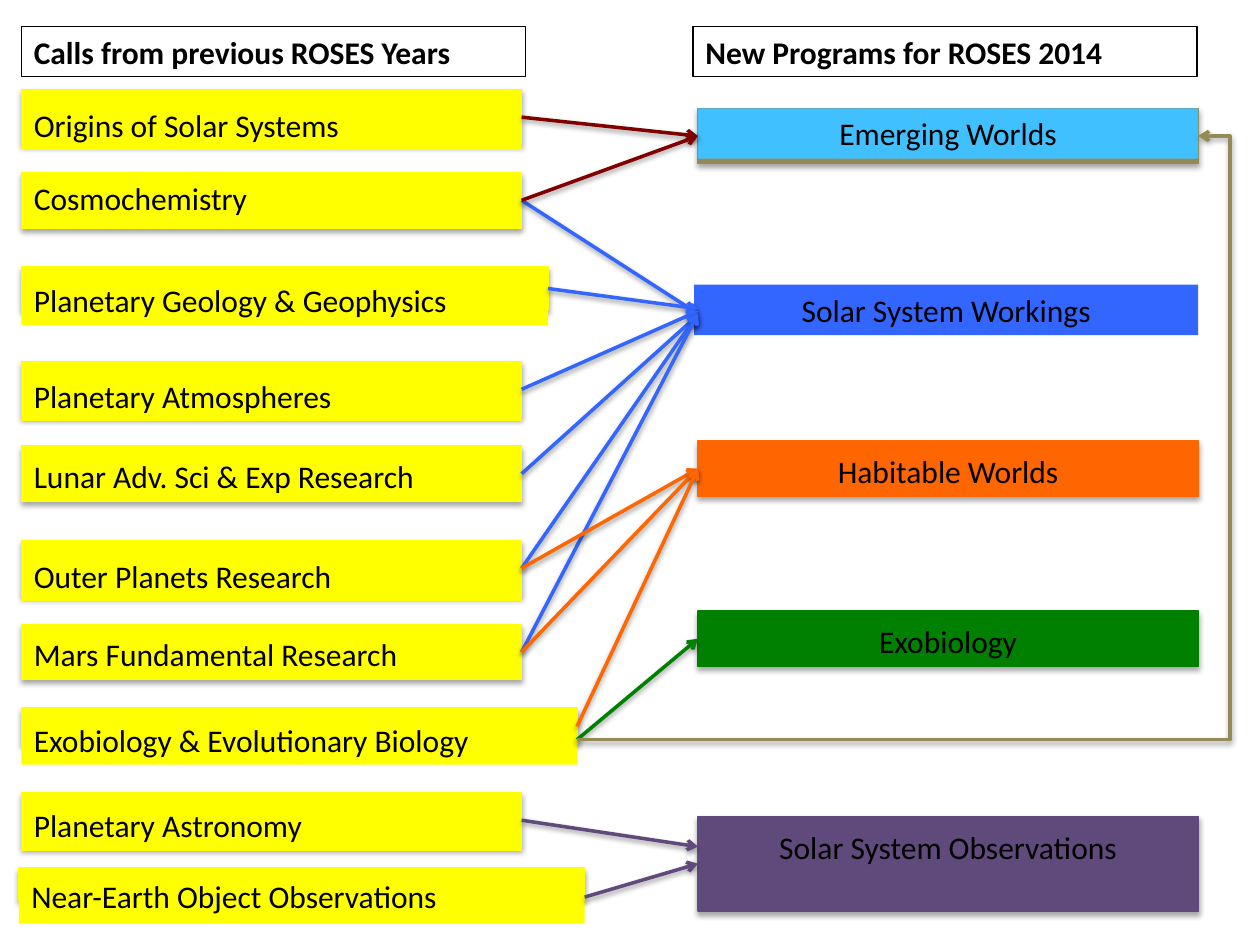
"""Build the slide that maps earlier ROSES calls to the new 2014 programs."""
import lxml.etree
import pptx
import pptx.dml.color
import pptx.enum.shapes
import pptx.enum.text
import pptx.oxml.ns
import pptx.util

Inches = pptx.util.Inches
COLORS = {
    "black": "000000", "yellow": "FFFF00", "tan": "948A54", "sky": "40C0FF",
    "blue": "3366FF", "orange": "FF6600", "green": "008000",
    "purple": "604A7B", "maroon": "800000",
}
LEFT, RIGHT = 1, 3
CALL_LEFT, PROGRAM_LEFT, BOX_WIDTH = 0.17, 5.54, 3.97

# text, left, width, (back top, height), (label top, height), outlined
CALLS = [
    ("Origins of Solar Systems", CALL_LEFT, BOX_WIDTH, (0.71, 0.44), (0.79, 0.4), False),
    ("Cosmochemistry", CALL_LEFT, BOX_WIDTH, (1.37, 0.44), (1.37, 0.4), False),
    ("Planetary Geology & Geophysics", CALL_LEFT, 4.18, (2.12, 0.34), (2.18, 0.4), False),
    ("Planetary Atmospheres", CALL_LEFT, BOX_WIDTH, (2.87, 0.44), (2.94, 0.4), False),
    ("Lunar Adv. Sci & Exp Research", CALL_LEFT, BOX_WIDTH, (3.54, 0.44), (3.58, 0.4), False),
    ("Outer Planets Research", CALL_LEFT, BOX_WIDTH, (4.29, 0.44), (4.37, 0.4), False),
    ("Mars Fundamental Research", CALL_LEFT, BOX_WIDTH, (4.96, 0.43), (4.99, 0.4), False),
    ("Exobiology & Evolutionary Biology", CALL_LEFT, 4.41, (5.62, 0.29), (5.67, 0.4), False),
    ("Planetary Astronomy", CALL_LEFT, BOX_WIDTH, (6.29, 0.44), (6.35, 0.4), True),
    ("Near-Earth Object Observations", 0.15, 4.49, (6.89, 0.26), (6.91, 0.42), False),
]
# text, label color, back color, (back top, height), label top, outlined
PROGRAMS = [
    ("Emerging Worlds", "sky", "tan", (0.86, 0.44), 0.86, False),
    ("Habitable Worlds", "orange", "orange", (3.5, 0.44), 3.54, False),
    ("Exobiology", "green", "green", (4.85, 0.44), 4.89, False),
    ("Solar System Observations", "purple", "purple", (6.48, 0.75), 6.52, True),
]
# call, call part, program, program part, color
LINKS = [
    ("Origins of Solar Systems", "back", "Emerging Worlds", "back", "maroon"),
    ("Cosmochemistry", "back", "Emerging Worlds", "back", "maroon"),
    ("Outer Planets Research", "back", "Habitable Worlds", "back", "orange"),
    ("Mars Fundamental Research", "back", "Habitable Worlds", "back", "orange"),
    ("Exobiology & Evolutionary Biology", "label", "Exobiology", "back", "green"),
    ("Exobiology & Evolutionary Biology", "back", "Habitable Worlds", "back", "orange"),
    ("Planetary Astronomy", "back", "Solar System Observations", "label", "purple"),
    ("Near-Earth Object Observations", "label", "Solar System Observations", "back", "purple"),
]
WORKINGS_ENDS = [
    ("Cosmochemistry", 2.49), ("Planetary Geology & Geophysics", 2.45),
    ("Planetary Atmospheres", 2.47), ("Lunar Adv. Sci & Exp Research", 2.5),
    ("Outer Planets Research", 2.49), ("Mars Fundamental Research", 2.49),
]


def rgb(name):
    """Return the named color."""
    return pptx.dml.color.RGBColor.from_string(COLORS[name])


def add_node(parent, tag, **attributes):
    """Append a drawing element and return it."""
    return lxml.etree.SubElement(parent, pptx.oxml.ns.qn(tag), **attributes)


def write_text(shape, text, size=18, bold=False, centered=False, color="black", font="Calibri"):
    """Write one formatted paragraph into a shape."""
    shape.text_frame.word_wrap = True
    paragraph = shape.text_frame.paragraphs[0]
    alignment = pptx.enum.text.PP_ALIGN
    paragraph.alignment = alignment.CENTER if centered else alignment.LEFT
    run = paragraph.add_run()
    run.text = text
    run.font.name, run.font.size, run.font.bold = font, pptx.util.Pt(size), bold
    run.font.color.rgb = rgb(color)


class SlideBuilder:
    """Hold the style and the current slide."""

    line_width = pptx.util.Pt(2)
    border_width = pptx.util.Pt(0.75)

    def __init__(self, slide):
        """Keep the slide to draw on."""
        self.slide = slide

    def cast_shadow(self, effects, opacity, distance):
        """Add a soft shadow below an element."""
        shadow = add_node(
            effects, "a:outerShdw", blurRad=str(pptx.util.Pt(3.1)),
            dist=str(pptx.util.Pt(distance)), dir="5400000", rotWithShape="0")
        color = add_node(shadow, "a:srgbClr", val=COLORS["black"])
        add_node(color, "a:alpha", val=str(opacity * 1000))

    def border(self, shape, color):
        """Outline a shape."""
        shape.line.color.rgb = rgb(color)
        shape.line.width = self.border_width

    def back(self, shapes, box, color):
        """Add a shadowed rectangle."""
        shape = shapes.add_shape(
            pptx.enum.shapes.MSO_SHAPE.RECTANGLE, *map(Inches, box))
        shape.fill.solid()
        shape.fill.fore_color.rgb = rgb(color)
        self.border(shape, color)
        shape.shadow.inherit = False
        effects = shape.element.spPr.find(pptx.oxml.ns.qn("a:effectLst"))
        self.cast_shadow(effects, 35, 1.8)
        return shape

    def label(self, shapes, box, text, fill=None, outline=None, **text_format):
        """Add a text box with an optional fill and outline."""
        shape = shapes.add_textbox(*map(Inches, box))
        if fill:
            shape.fill.solid()
            shape.fill.fore_color.rgb = rgb(fill)
        if outline:
            self.border(shape, outline)
        write_text(shape, text, **text_format)
        return shape

    def arrow(self, start, color, target=None, side=LEFT, point=(0, 0), bend=None):
        """Add an arrow from a shape's right side to a shape or a point."""
        kinds = pptx.enum.shapes.MSO_CONNECTOR
        kind = kinds.ELBOW if bend else kinds.STRAIGHT
        end = [Inches(value) for value in point]
        connector = self.slide.shapes.add_connector(kind, 0, 0, *end)
        connector.begin_connect(start, RIGHT)
        if target is not None:
            connector.end_connect(target, side)
        connector.line.color.rgb = rgb(color)
        connector.line.width = self.line_width
        properties = connector.element.spPr
        add_node(properties.find(pptx.oxml.ns.qn("a:ln")), "a:tailEnd", type="arrow")
        self.cast_shadow(add_node(properties, "a:effectLst"), 38, 1.6)
        if bend:
            guides = properties.find(".//" + pptx.oxml.ns.qn("a:avLst"))
            add_node(guides, "a:gd", name="adj1", fmla=f"val {round(bend * 100000)}")


def main():
    """Build and save the presentation."""
    presentation = pptx.Presentation()
    presentation.slide_width, presentation.slide_height = Inches(10), Inches(7.5)
    slide = presentation.slides.add_slide(presentation.slide_layouts[6])
    builder = SlideBuilder(slide)
    parts = {}

    for text, left, width, (top, height), (label_top, label_height), outlined in CALLS:
        group = slide.shapes.add_group_shape()
        parts[text, "back"] = builder.back(group.shapes, (left, top, width, height), "yellow")
        parts[text, "label"] = builder.label(
            group.shapes, (left, label_top, width, label_height), text,
            fill="yellow", outline="yellow" if outlined else None)

    for text, color, back_color, (top, height), label_top, outlined in PROGRAMS:
        parts[text, "back"] = builder.back(
            slide.shapes, (PROGRAM_LEFT, top, BOX_WIDTH, height), back_color)
        parts[text, "label"] = builder.label(
            slide.shapes, (PROGRAM_LEFT, label_top, BOX_WIDTH, 0.4), text,
            fill=color, outline=color if outlined else None, centered=True)
    builder.label(slide.shapes, (5.51, 2.26, 4, 0.4), "Solar System Workings",
                  fill="blue", centered=True)

    for call, end in WORKINGS_ENDS:
        builder.arrow(parts[call, "back"], "blue", point=(PROGRAM_LEFT, end))
    for call, call_part, program, program_part, color in LINKS:
        builder.arrow(parts[call, call_part], color, parts[program, program_part])
    builder.arrow(parts["Exobiology & Evolutionary Biology", "label"], "tan",
                  parts["Emerging Worlds", "back"], side=RIGHT, bend=1.051)

    for left, text in ((0.17, "Calls from previous ROSES Years"),
                       (5.5, "New Programs for ROSES 2014")):
        builder.label(slide.shapes, (left, 0.21, 4, 0.4), text, outline="black", bold=True)
    presentation.save("out.pptx")


if __name__ == "__main__":
    main()
